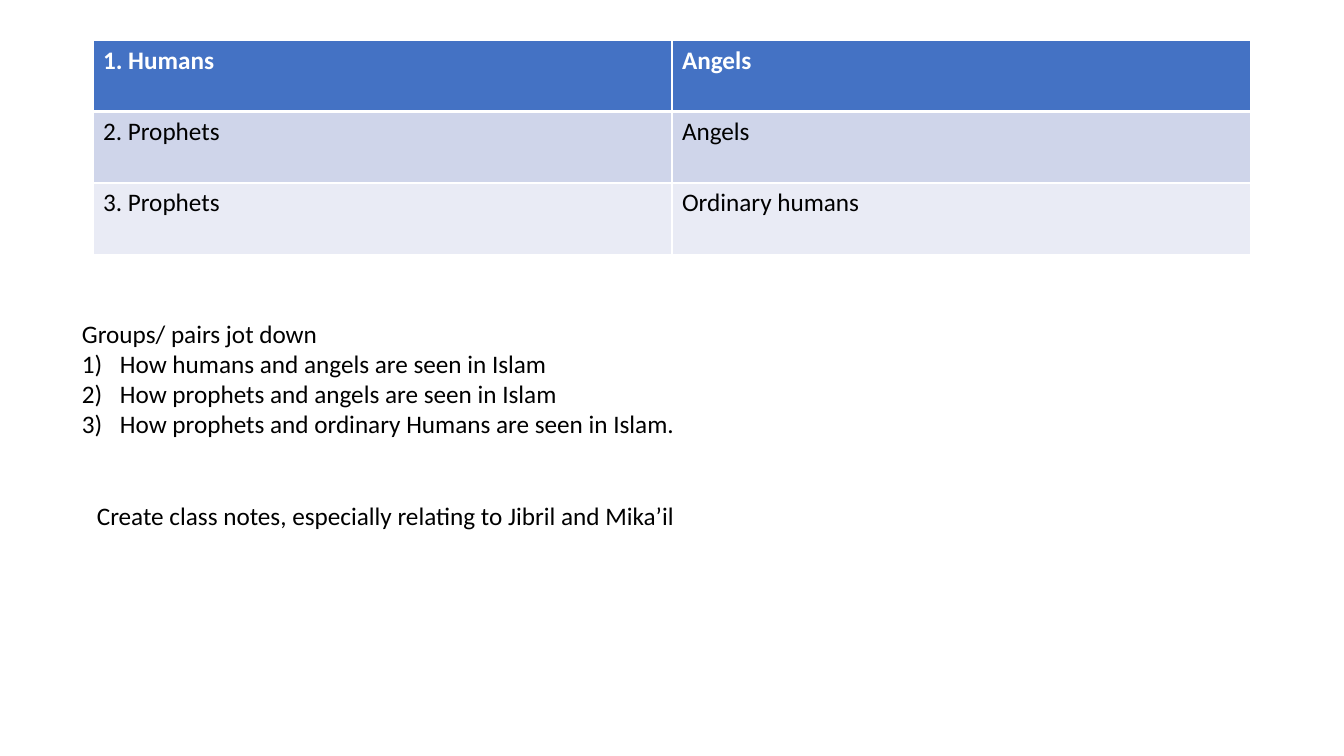
import pptx
import pptx.dml.color
import pptx.enum.text
import pptx.oxml
import pptx.oxml.ns
import pptx.util

RGB = pptx.dml.color.RGBColor
WHITE = RGB(0xFF, 0xFF, 0xFF)
BLACK = RGB(0x00, 0x00, 0x00)
BLUE = RGB(0x44, 0x72, 0xC4)
BAND_DARK = RGB(0xCF, 0xD5, 0xEA)
BAND_LIGHT = RGB(0xE9, 0xEB, 0xF5)
NS = pptx.oxml.ns.nsdecls("a")


def px(*lengths):
    return [pptx.util.Emu(round(n * 914400 / 100.8)) for n in lengths]


def write(p, text, color=BLACK, bold=False):
    r = p.add_run()
    r.text = text
    font = {"name": "Calibri", "size": pptx.util.Pt(18), "bold": bold}
    for key, value in font.items():
        setattr(r.font, key, value)
    r.font.color.rgb = color


prs = pptx.Presentation()
prs.slide_width, prs.slide_height = px(1344, 756)
s = prs.slides.add_slide(prs.slide_layouts[6])

# Comparison table
rows = [
    (("1. Humans", "Angels"), BLUE, WHITE, True),
    (("2. Prophets", "Angels"), BAND_DARK, BLACK, False),
    (("3. Prophets", "Ordinary humans"), BAND_LIGHT, BLACK, False),
]
table = s.shapes.add_table(3, 2, *px(93, 40, 1158, 214)).table
for i, (texts, fill, color, bold) in enumerate(rows):
    table.rows[i].height = px(71.5)[0]
    for j, text in enumerate(texts):
        cell = table.cell(i, j)
        write(cell.text_frame.paragraphs[0], text, color, bold)
        # White borders, thicker between the header and the body
        widths = {"L": 1, "R": 1, "T": 3 if i == 1 else 1, "B": 3 if i == 0 else 1}
        for side, width in widths.items():
            cell._tc.get_or_add_tcPr().append(pptx.oxml.parse_xml(
                f'<a:ln{side} {NS} w="{pptx.util.Pt(width)}"><a:solidFill>'
                f'<a:srgbClr val="{WHITE}"/></a:solidFill></a:ln{side}>'))
        cell.fill.solid()
        cell.fill.fore_color.rgb = fill

# Task and class notes; True marks a numbered line
boxes = [
    ((72, 313, 1179, 132), [
        ("Groups/ pairs jot down", False),
        ("How humans and angels are seen in Islam", True),
        ("How prophets and angels are seen in Islam", True),
        ("How prophets and ordinary Humans are seen in Islam.", True),
    ]),
    ((87, 495, 778, 40), [
        ("Create class notes, especially relating to Jibril and Mika’il", False),
    ]),
]
indent = px(38)[0]
for place, lines in boxes:
    tf = s.shapes.add_textbox(*px(*place)).text_frame
    tf.word_wrap = True
    tf.auto_size = pptx.enum.text.MSO_AUTO_SIZE.SHAPE_TO_FIT_TEXT
    for i, (text, numbered) in enumerate(lines):
        p = tf.add_paragraph() if i else tf.paragraphs[0]
        write(p, text)
        if numbered:
            pPr = p._p.get_or_add_pPr()
            pPr.set("marL", str(indent))
            pPr.set("indent", str(-indent))
            pPr.append(pptx.oxml.parse_xml(f'<a:buFont {NS} typeface="+mj-lt"/>'))
            pPr.append(pptx.oxml.parse_xml(f'<a:buAutoNum {NS} type="arabicParenR"/>'))

prs.save("out.pptx")
